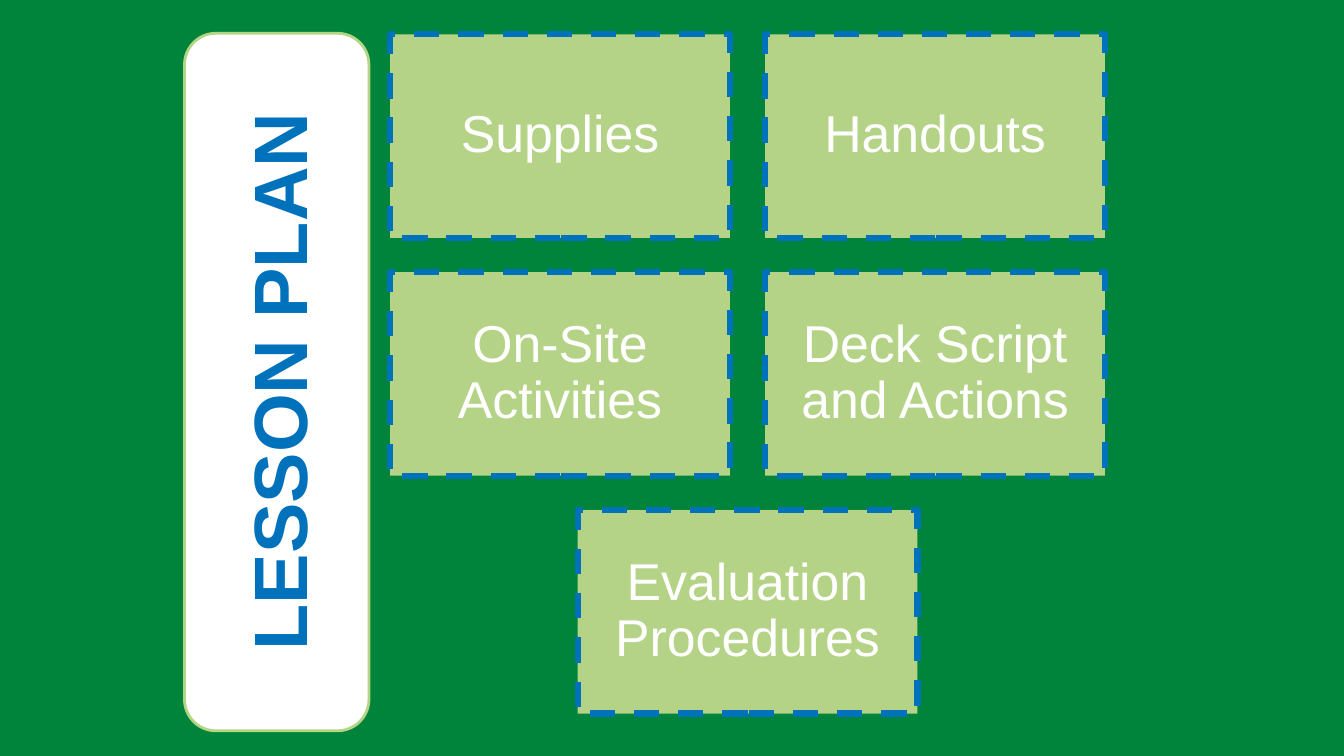
"""Build the lesson plan slide: a vertical title panel beside a grid of topic cards."""
import dataclasses

import pptx
import pptx.dml.color
import pptx.enum.dml
import pptx.enum.shapes
import pptx.enum.text
import pptx.util

Inches = pptx.util.Inches
COLORS = {
    "background": "00833B",
    "panel": "FFFFFF",
    "panel_line": "B4D486",
    "card": "B4D386",
    "accent": "0072BC",
    "card_text": "FFFFFF",
}
CARD_ROWS = [
    ["Supplies", "Handouts"],
    ["On-Site Activities", "Deck Script and Actions"],
    ["Evaluation Procedures"],
]
CARD_WIDTH, CARD_HEIGHT = 3.37, 2.02
COLUMN_GAP, ROW_GAP = 0.35, 0.34
GRID_CENTER, GRID_TOP = 7.415, 0.34


@dataclasses.dataclass
class Box:
    """Position and size in inches."""

    left: float
    top: float
    width: float
    height: float

    def lengths(self) -> list[pptx.util.Length]:
        """Return left, top, width and height as lengths."""
        return [Inches(value) for value in dataclasses.astuple(self)]


@dataclasses.dataclass
class Card:
    """A topic and the box that holds it."""

    text: str
    box: Box


@dataclasses.dataclass
class TextStyle:
    """Size, colour, weight and spacing of a text."""

    size: float
    color: str
    bold: bool
    line_spacing: float
    margin_x: float
    margin_y: float


TITLE_STYLE = TextStyle(54, "accent", True, 1.0, 0.1, 0.05)
CARD_STYLE = TextStyle(37, "card_text", False, 0.9, 0.15, 0.15)


def rgb(name: str) -> pptx.dml.color.RGBColor:
    """Look up a named colour."""
    return pptx.dml.color.RGBColor.from_string(COLORS[name])


def layout_cards() -> list[Card]:
    """Place every row of cards centred on the grid."""
    cards = []
    pitch = CARD_WIDTH + COLUMN_GAP
    for row, texts in enumerate(CARD_ROWS):
        row_left = GRID_CENTER - (len(texts) * pitch - COLUMN_GAP) / 2
        top = GRID_TOP + row * (CARD_HEIGHT + ROW_GAP)
        for column, text in enumerate(texts):
            box = Box(row_left + column * pitch, top, CARD_WIDTH, CARD_HEIGHT)
            cards.append(Card(text, box))
    return cards


def write_text(shape, text: str, style: TextStyle) -> None:
    """Fill a shape with centred, formatted text."""
    frame = shape.text_frame
    frame.text = text
    frame.word_wrap = True
    frame.auto_size = pptx.enum.text.MSO_AUTO_SIZE.NONE
    frame.vertical_anchor = pptx.enum.text.MSO_ANCHOR.MIDDLE
    frame.margin_left = frame.margin_right = Inches(style.margin_x)
    frame.margin_top = frame.margin_bottom = Inches(style.margin_y)
    paragraph = frame.paragraphs[0]
    paragraph.alignment = pptx.enum.text.PP_ALIGN.CENTER
    paragraph.line_spacing = style.line_spacing
    font = paragraph.runs[0].font
    font.name = "Arial"
    font.size = pptx.util.Pt(style.size)
    font.bold = style.bold
    font.color.rgb = rgb(style.color)


def add_box(slide, kind, box: Box, fill: str, line: str, line_width: float):
    """Add a filled and outlined shape without shadow."""
    shape = slide.shapes.add_shape(kind, *box.lengths())
    shape.shadow.inherit = False
    shape.fill.solid()
    shape.fill.fore_color.rgb = rgb(fill)
    shape.line.color.rgb = rgb(line)
    shape.line.width = pptx.util.Pt(line_width)
    return shape


def add_title_panel(slide) -> None:
    """Add the rounded panel and set the title upright on it."""
    kind = pptx.enum.shapes.MSO_SHAPE.ROUNDED_RECTANGLE
    panel = add_box(slide, kind, Box(1.83, 0.33, 1.83, 6.92), "panel", "panel_line", 2)
    panel.adjustments[0] = 0.17
    title = slide.shapes.title
    title.left, title.top, title.width, title.height = Box(-0.62, 2.96, 6.74, 1.65).lengths()
    title.rotation = 270
    write_text(title, "LESSON PLAN", TITLE_STYLE)
    panel._element.addnext(title._element)


def add_card(slide, card: Card) -> None:
    """Add one dashed topic card."""
    kind = pptx.enum.shapes.MSO_SHAPE.RECTANGLE
    shape = add_box(slide, kind, card.box, "card", "accent", 4.5)
    shape.line.dash_style = pptx.enum.dml.MSO_LINE.DASH
    write_text(shape, card.text, CARD_STYLE)


def main() -> None:
    """Build and save the presentation."""
    presentation = pptx.Presentation()
    presentation.slide_width = Inches(13.33)
    presentation.slide_height = Inches(7.5)
    slide = presentation.slides.add_slide(presentation.slide_layouts.get_by_name("Title Only"))
    slide.background.fill.solid()
    slide.background.fill.fore_color.rgb = rgb("background")
    add_title_panel(slide)
    for card in layout_cards():
        add_card(slide, card)
    presentation.save("out.pptx")


if __name__ == "__main__":
    main()
